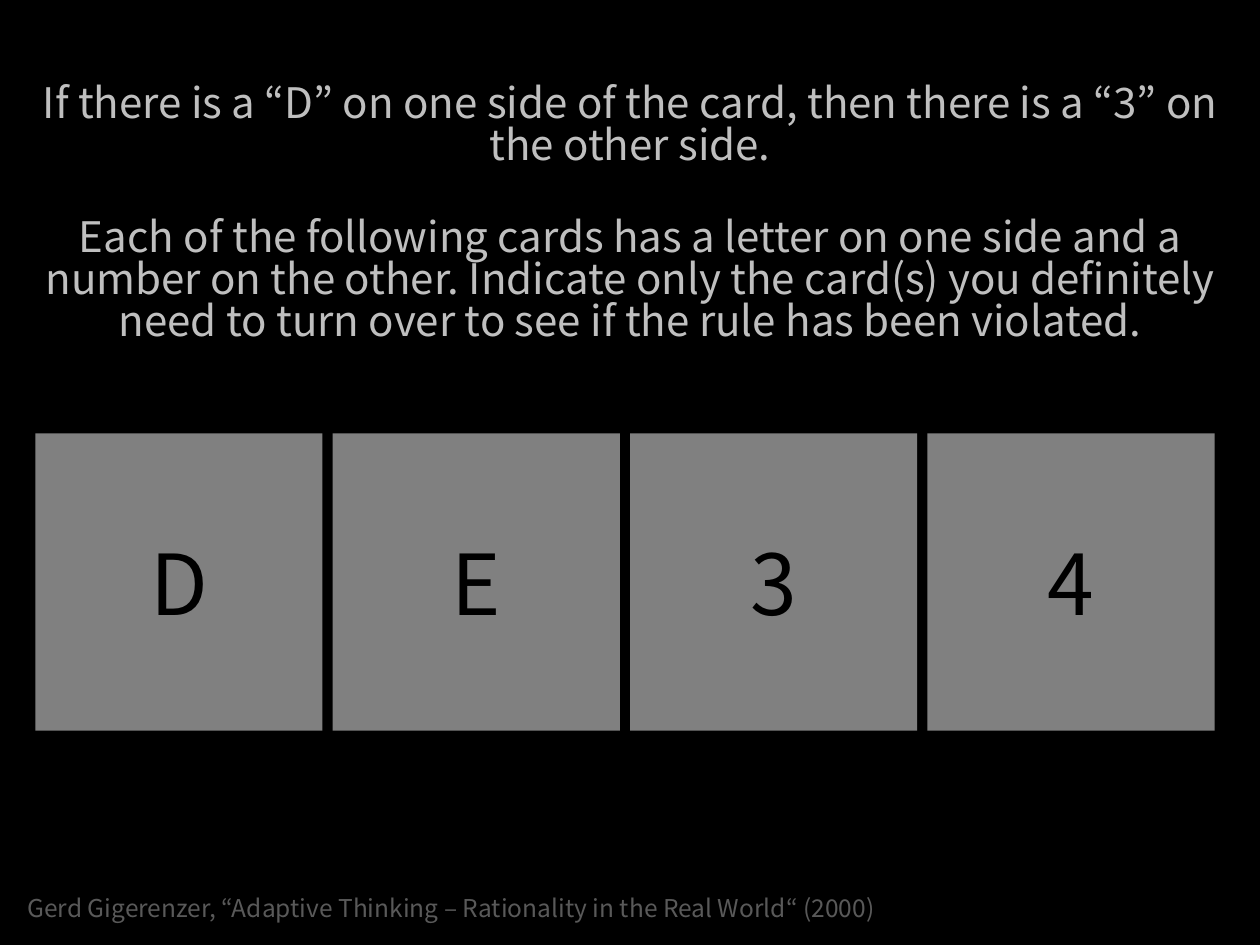
"""Build the card selection task slide."""
from pptx import Presentation
from pptx.dml.color import RGBColor
from pptx.enum.shapes import MSO_SHAPE
from pptx.enum.text import MSO_ANCHOR, MSO_AUTO_SIZE, PP_ALIGN
from pptx.util import Inches, Pt

RECT = MSO_SHAPE.RECTANGLE
MIDDLE = MSO_ANCHOR.MIDDLE
NOFIT = MSO_AUTO_SIZE.NONE
LEFT, CENTER = PP_ALIGN.LEFT, PP_ALIGN.CENTER
FONT = "Noto Sans CJK KR"
HUES = {"back": "000000", "rule": "BFBFBF", "card": "808080",
        "face": "000000", "credit": "595959"}
RULES = [
    "If there is a “D” on one side of the card, then there is a “3” on the other side.",
    "Each of the following cards has a letter on one side and a number on the other. "
    "Indicate only the card(s) you definitely need to turn over to see if the rule "
    "has been violated.",
]
CREDIT = "Gerd Gigerenzer, “Adaptive Thinking – Rationality in the Real World“ (2000)"


def tint(name):
    return RGBColor.from_string(HUES[name])


def write(shape, lines, size, hue, form):
    frame = shape.text_frame
    frame.word_wrap = True
    frame.auto_size = NOFIT
    frame.vertical_anchor = MIDDLE
    frame.text = "\n".join(lines)
    for para in frame.paragraphs:
        for key, value in form.items():
            setattr(para, key, value)
        font = para.runs[0].font
        looks = {"name": FONT, "size": Pt(size), "bold": False}
        for key, value in looks.items():
            setattr(font, key, value)
        font.color.rgb = tint(hue)


deck = Presentation()
deck.slide_width, deck.slide_height = Inches(10), Inches(7.5)
slide = deck.slides.add_slide(deck.slide_layouts[5])
slide.background.fill.solid()
slide.background.fill.fore_color.rgb = tint("back")

credit = slide.shapes.add_textbox(Inches(0.12), Inches(6.82), Inches(9.76), Inches(0.55))
write(credit, [CREDIT], 14, "credit", {"alignment": LEFT})
credit.text_frame.margin_top = Inches(0.26)

title = slide.shapes.title
spot = {"left": 0.12, "top": 0.13, "width": 9.76, "height": 3.15}
for key, value in spot.items():
    setattr(title, key, Inches(value))
write(title, RULES, 24, "rule", {"alignment": CENTER, "line_spacing": 0.83})
title.text_frame.paragraphs[1].space_before = Pt(28.7)

wide, gap = 2.28, 0.08
for i, face in enumerate("DE34"):
    left = 0.28 + i * (wide + gap)
    card = slide.shapes.add_shape(RECT, Inches(left), Inches(3.44), Inches(wide), Inches(2.36))
    card.shadow.inherit = False
    card.fill.solid()
    card.fill.fore_color.rgb = tint("card")
    card.line.fill.background()
    write(card, [face], 48, "face", {"alignment": CENTER})

deck.save("out.pptx")
